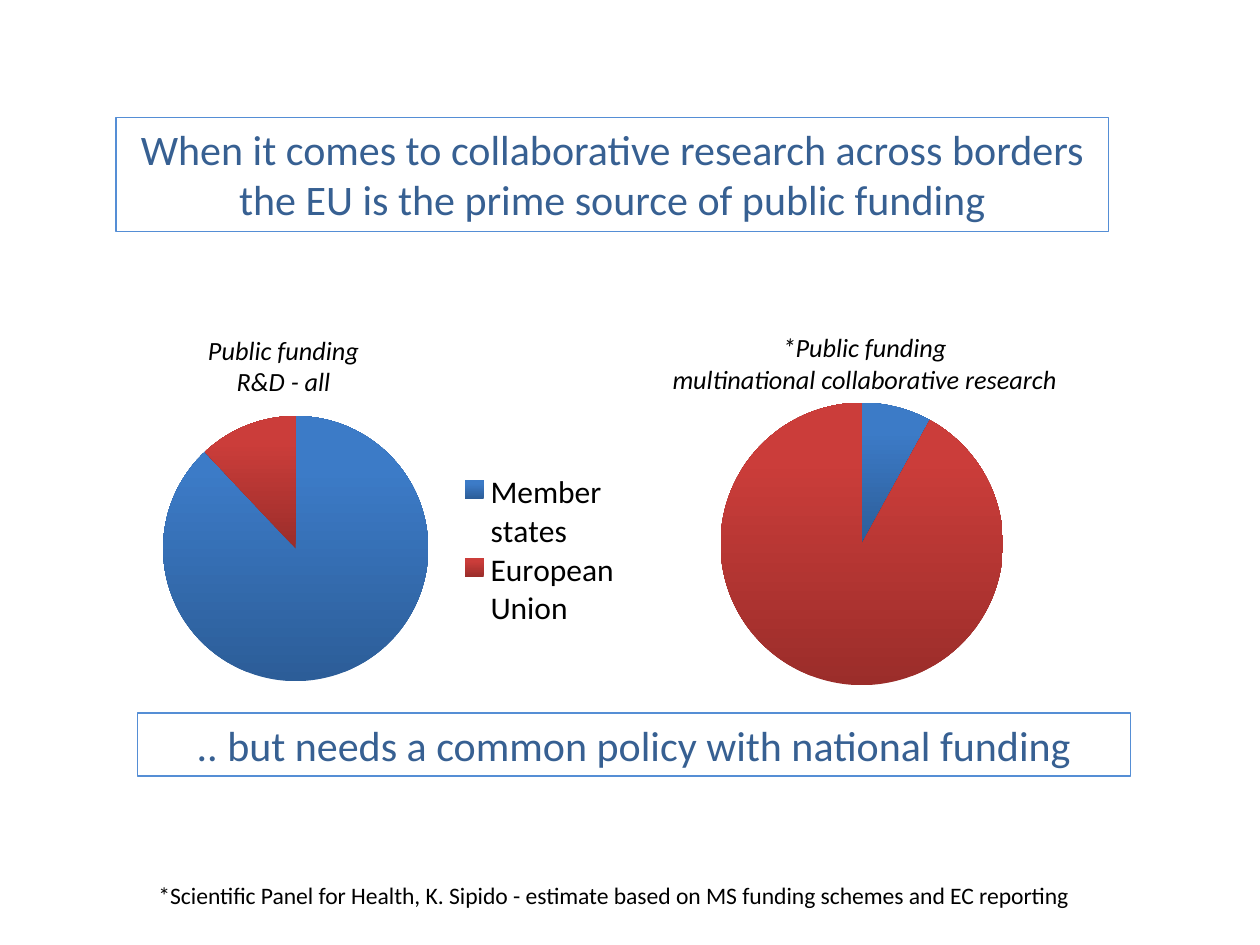
"""Build a slide comparing two pies of public research funding."""
from lxml.etree import SubElement
from pptx import Presentation
from pptx.chart.data import CategoryChartData
from pptx.dml.color import RGBColor as Color
from pptx.enum.chart import XL_CHART_TYPE as ChartType, XL_LEGEND_POSITION as LegendSide
from pptx.enum.text import MSO_ANCHOR as Anchor, MSO_AUTO_SIZE as AutoSize, PP_ALIGN as Align
from pptx.oxml.ns import qn
from pptx.util import Pt

THEME = {
    "font": "Calibri",
    "text": "000000",
    "heading": "376092",
    "outline": "558ED5",
    "slices": [("2C5D98", "3C7BC7"), ("9B2D2A", "CB3D3A")],
    "heading_size": 24,
    "legend_size": 18,
    "caption_size": 15,
    "note_size": 13.5,
}
HEADING = {"size": Pt(THEME["heading_size"]), "italic": False}
CAPTION = {"size": Pt(THEME["caption_size"]), "italic": True}
NOTE = {"size": Pt(THEME["note_size"]), "italic": False}

TITLE = {
    "lines": ["When it comes to collaborative research across borders",
              "the EU is the prime source of public funding"],
    "at": (66.24, 66.96, 567.36, 65.52), "style": HEADING, "framed": True,
}
TEXTS = [
    {"lines": ["Public funding", "R&D - all"],
     "at": (101.52, 187.2, 120.96, 43.92), "style": CAPTION},
    {"lines": ["*Public funding", "multinational collaborative research"],
     "at": (356.5, 185.76, 275.04, 51.84), "style": CAPTION},
    {"lines": ["*Scientific Panel for Health, K. Sipido - estimate based on "
               "MS funding schemes and EC reporting"],
     "at": (83.52, 499.68, 621.36, 28.08), "style": NOTE, "align": Align.LEFT},
    {"lines": [".. but needs a common policy with national funding"],
     "at": (78.48, 407.52, 567.36, 36), "style": HEADING, "framed": True},
]
PIES = [
    {"categories": ["Member states", "European Union"], "values": [88, 12],
     "at": (83.52, 198.72, 275.76, 229.68),
     "plot": (0.03, 0.17, 0.56, 0.66), "legend": (0.64, 0.31, 0.35, 0.39)},
    {"categories": ["1", "2"], "values": [8, 92],
     "at": (369.36, 221.04, 246.24, 181.44), "plot": (0.17, 0.05, 0.66, 0.89)},
]


def points(lengths):
    return [Pt(length) for length in lengths]


def apply(target, formats):
    for name, value in formats.items():
        setattr(target, name, value)


def fill_text(box, lines, at, style, framed=False, align=Align.CENTER):
    apply(box, dict(zip(("left", "top", "width", "height"), points(at))))
    frame = box.text_frame
    apply(frame, {"text": "\n".join(lines), "word_wrap": True,
                  "auto_size": AutoSize.NONE, "vertical_anchor": Anchor.TOP})
    for para in frame.paragraphs:
        para.alignment = align
        apply(para.font, {"name": THEME["font"], **style})
        ink = THEME["heading"] if framed else THEME["text"]
        para.font.color.rgb = Color.from_string(ink)
    if framed:
        box.line.color.rgb = Color.from_string(THEME["outline"])
        box.line.width = Pt(0.75)


def place(parent, index, fractions, inner=False):
    for old in parent.findall(qn("c:layout")):
        parent.remove(old)
    layout = SubElement(parent, qn("c:layout"))
    parent.insert(index, layout)
    manual = SubElement(layout, qn("c:manualLayout"))
    settings = [("layoutTarget", "inner")] if inner else []
    settings += [("xMode", "edge"), ("yMode", "edge")]
    settings += zip("xywh", fractions)
    for name, value in settings:
        SubElement(manual, qn(f"c:{name}")).set("val", str(value))


def add_pie(page, categories, values, at, plot, legend=None):
    data = CategoryChartData(number_format="0")
    data.categories = categories
    data.add_series("Series 1", values)
    chart = page.shapes.add_chart(ChartType.PIE, *points(at), data).chart
    apply(chart, {"has_title": False, "has_legend": legend is not None})
    apply(chart.font, {"name": THEME["font"], "size": Pt(THEME["legend_size"])})
    chart.font.color.rgb = Color.from_string(THEME["text"])
    pie = chart.plots[0]
    pie.vary_by_categories = True
    for index, shades in enumerate(THEME["slices"]):
        slice_format = pie.series[0].points[index].format
        slice_format.line.fill.background()
        slice_format.fill.gradient()
        slice_format.fill.gradient_angle = 90
        for stop, shade, position in zip(slice_format.fill.gradient_stops, shades, (0, 0.8)):
            stop.color.rgb = Color.from_string(shade)
            stop.position = position
    place(chart.element.find(".//" + qn("c:plotArea")), 0, plot, inner=True)
    if legend:
        apply(chart.legend, {"position": LegendSide.RIGHT, "include_in_layout": False})
        place(chart.element.find(".//" + qn("c:legend")), 1, legend)


def main():
    deck = Presentation()
    apply(deck, {"slide_width": Pt(720), "slide_height": Pt(540)})
    page = deck.slides.add_slide(deck.slide_layouts[5])
    fill_text(page.shapes.title, **TITLE)
    for pie in PIES:
        add_pie(page, **pie)
    for text in TEXTS:
        fill_text(page.shapes.add_textbox(*points(text["at"])), **text)
    deck.save("out.pptx")


if __name__ == "__main__":
    main()
